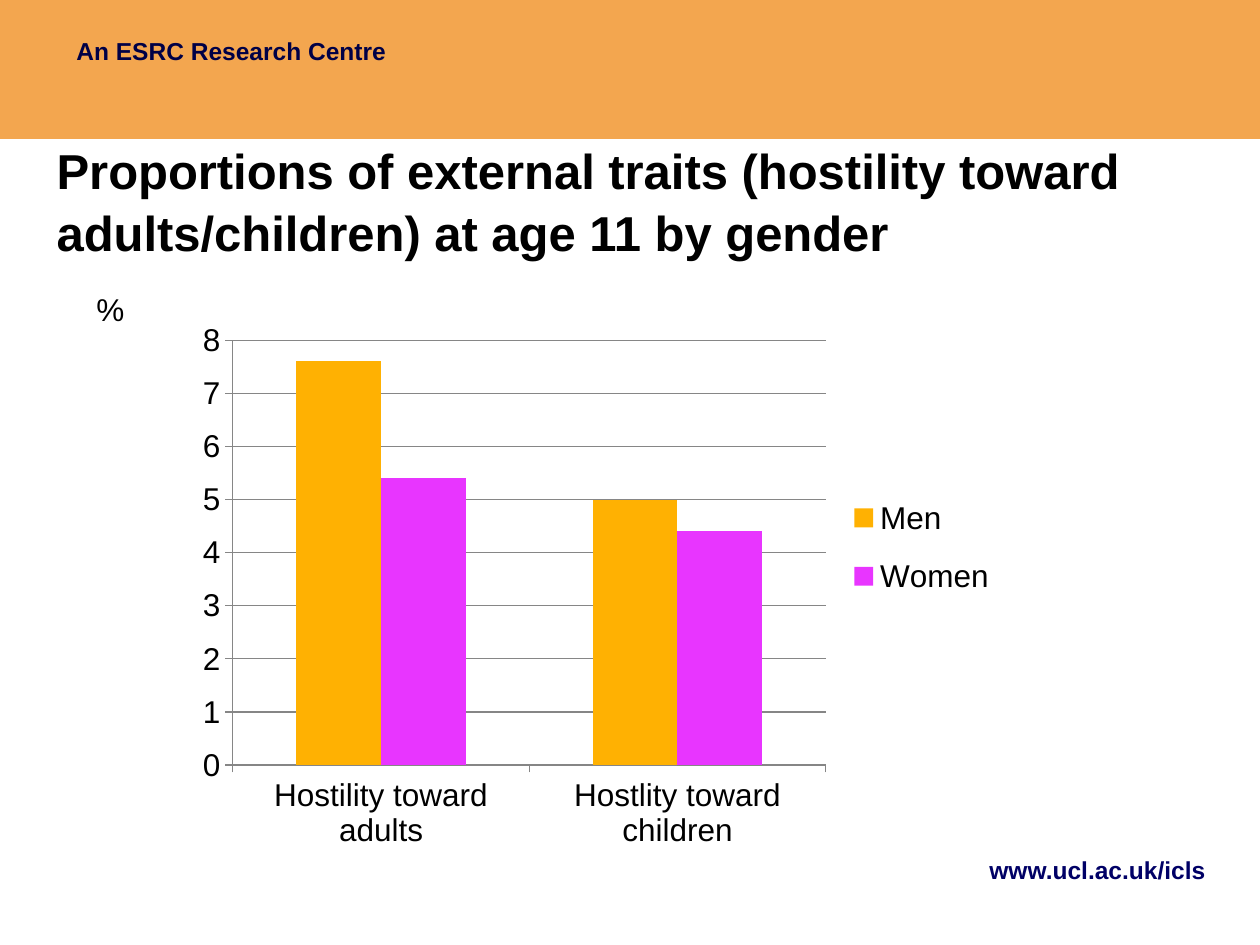
from lxml import etree
from pptx import Presentation
from pptx.chart.data import CategoryChartData
from pptx.dml.color import RGBColor
from pptx.enum.chart import XL_CHART_TYPE, XL_LEGEND_POSITION, XL_TICK_MARK
from pptx.enum.shapes import MSO_SHAPE
from pptx.enum.text import MSO_ANCHOR, PP_ALIGN
from pptx.oxml.ns import qn
from pptx.util import Pt

PX = 914400 / 126
FONT = "Arial"
COLORS = {
    "band": "F3A64F",
    "header": "000046",
    "link": "000066",
    "text": "000000",
    "grid": "868686",
    "Men": "FFB102",
    "Women": "E835FF",
}
CATEGORIES = ["Hostility toward adults", "Hostlity toward children"]
SERIES = {"Men": [7.6, 5], "Women": [5.4, 4.4]}


def px(*lengths):
    return [round(length * PX) for length in lengths]


def color(name):
    return RGBColor.from_string(COLORS[name])


def set_font(font, size, color_name="text", bold=False):
    font.name = FONT
    font.size = Pt(size)
    font.bold = bold
    font.color.rgb = color(color_name)


def write_text(shape, text, size, color_name="text", bold=False, align=PP_ALIGN.LEFT,
               anchor=MSO_ANCHOR.TOP, wrap=True, line_spacing=1.0):
    frame = shape.text_frame
    frame.word_wrap = wrap
    frame.vertical_anchor = anchor
    frame.text = text
    paragraph = frame.paragraphs[0]
    paragraph.alignment = align
    paragraph.line_spacing = line_spacing
    set_font(paragraph.runs[0].font, size, color_name, bold)


def add_text(slide, box, text, size, **text_format):
    write_text(slide.shapes.add_textbox(*px(*box)), text, size, **text_format)


def add_title(slide, box, text):
    title = slide.shapes.title
    title.left, title.top, title.width, title.height = px(*box)
    write_text(title, text, 28, bold=True, anchor=MSO_ANCHOR.MIDDLE, line_spacing=1.05)


def add_band(slide, box):
    band = slide.shapes.add_shape(MSO_SHAPE.RECTANGLE, *px(*box))
    band.shadow.inherit = False
    band.fill.solid()
    band.fill.fore_color.rgb = color("band")
    band.line.fill.background()


def make_layout(x, y, width, height, inner=False):
    """Return a manual chart layout, in fractions of the chart's size."""
    layout = etree.Element(qn("c:layout"))
    manual = etree.SubElement(layout, qn("c:manualLayout"))
    settings = {"xMode": "edge", "yMode": "edge", "x": x, "y": y, "w": width, "h": height}
    if inner:
        settings = {"layoutTarget": "inner", **settings}
    for tag, value in settings.items():
        etree.SubElement(manual, qn(f"c:{tag}")).set("val", str(value))
    return layout


def place_chart_part(part, index, layout):
    for old_layout in part.findall(qn("c:layout")):
        part.remove(old_layout)
    part.insert(index, layout)


def format_axis(axis):
    axis.major_tick_mark = XL_TICK_MARK.OUTSIDE
    axis.minor_tick_mark = XL_TICK_MARK.NONE
    axis.format.line.color.rgb = color("grid")
    axis.format.line.width = Pt(0.75)
    set_font(axis.tick_labels.font, 18)


def add_column_chart(slide, box):
    data = CategoryChartData()
    data.categories = CATEGORIES
    for name, values in SERIES.items():
        data.add_series(name, values)
    chart = slide.shapes.add_chart(XL_CHART_TYPE.COLUMN_CLUSTERED, *px(*box), data).chart
    chart.has_title = False
    set_font(chart.font, 18)

    plot = chart.plots[0]
    plot.vary_by_categories = False
    plot.gap_width = 150
    plot.overlap = 0
    for series in plot.series:
        series.format.fill.solid()
        series.format.fill.fore_color.rgb = color(series.name)

    format_axis(chart.category_axis)
    value_axis = chart.value_axis
    format_axis(value_axis)
    value_axis.minimum_scale = 0
    value_axis.maximum_scale = 8
    value_axis.major_unit = 1
    value_axis.has_major_gridlines = True
    value_axis.major_gridlines.format.line.color.rgb = color("grid")
    value_axis.major_gridlines.format.line.width = Pt(0.75)

    chart.has_legend = True
    legend = chart.legend
    legend.position = XL_LEGEND_POSITION.RIGHT
    legend.include_in_layout = False
    set_font(legend.font, 18)

    plot_area = chart.element.find(f".//{qn('c:plotArea')}")
    place_chart_part(plot_area, 0, make_layout(0.07, 0.065, 0.706, 0.76, inner=True))
    legend_part = chart.element.find(f".//{qn('c:legend')}")
    place_chart_part(legend_part, 1, make_layout(0.8, 0.31, 0.18, 0.25))


def main():
    presentation = Presentation()
    presentation.slide_width, presentation.slide_height = px(1260, 945)
    slide = presentation.slides.add_slide(presentation.slide_layouts[5])

    add_band(slide, (0, 0, 1260, 139))
    add_text(slide, (64, 30, 456, 42), "An ESRC Research Centre", 14,
             color_name="header", bold=True)
    add_title(slide, (44, 125, 1160, 149),
              "Proportions of external traits (hostility toward adults/children) "
              "at age 11 by gender")
    add_text(slide, (819, 849, 399, 66), "www.ucl.ac.uk/icls", 14,
             color_name="link", bold=True, align=PP_ALIGN.RIGHT)
    add_text(slide, (84, 284, 49, 50), "%", 18, wrap=False)
    add_column_chart(slide, (174, 304, 840, 559))

    presentation.save("out.pptx")


if __name__ == "__main__":
    main()
